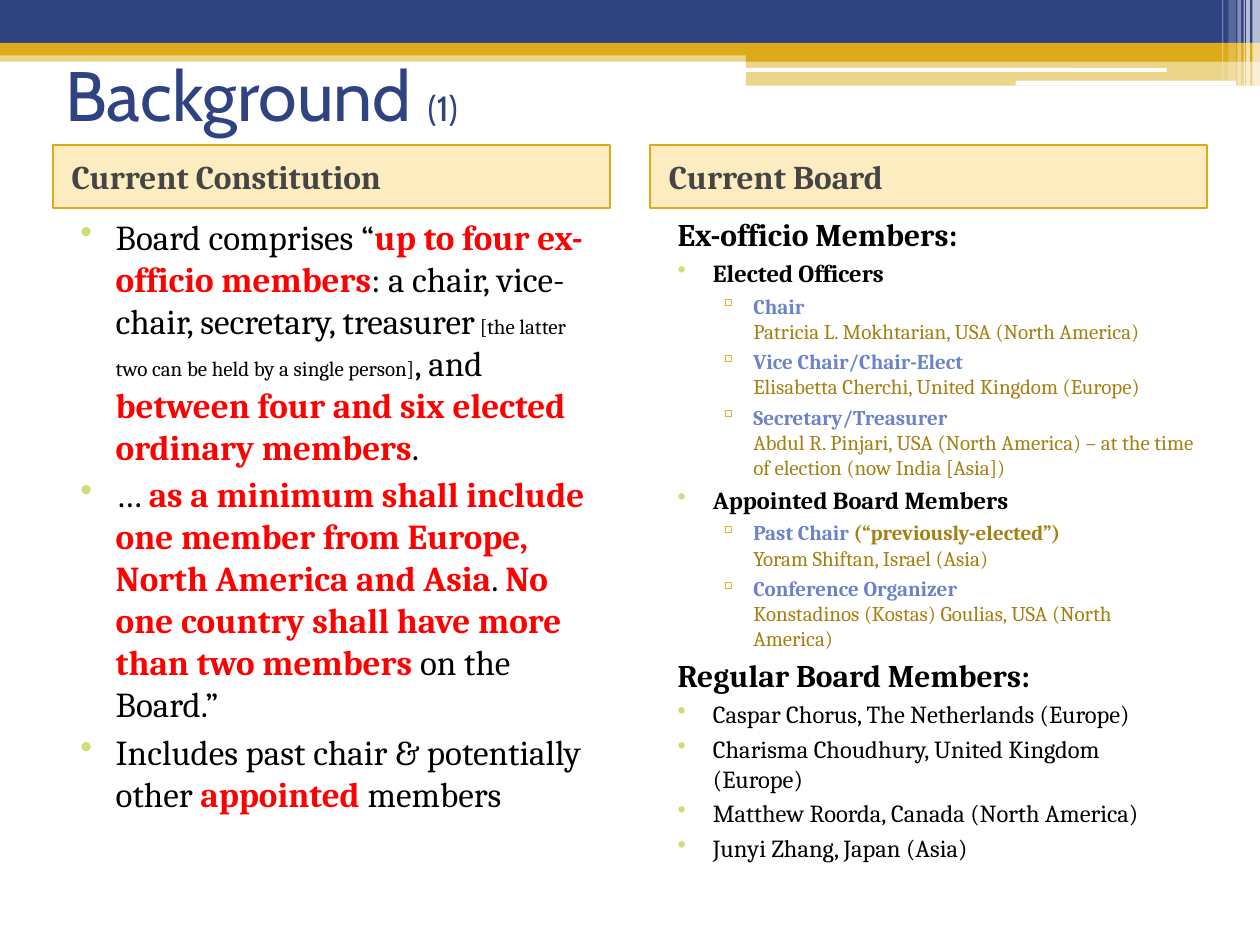
from copy import deepcopy
from dataclasses import dataclass

from lxml.etree import SubElement
from pptx import Presentation
from pptx.dml.color import RGBColor
from pptx.enum.shapes import MSO_SHAPE as Shape
from pptx.enum.text import MSO_ANCHOR as Anchor
from pptx.oxml.ns import qn
from pptx.util import Inches, Pt


@dataclass(frozen=True)
class Theme:
    navy: str = "2F4381"
    gold: str = "DDAA19"
    amber: str = "F6B600"
    white: str = "FFFFFF"
    black: str = "000000"
    gray: str = "454545"
    red: str = "FF0000"
    blue: str = "6C83C9"
    brown: str = "A67F13"
    lime: str = "D2DA7A"
    heading_font: str = "Cabin"
    body_font: str = "Cambria"
    title: int = 40
    body: int = 20
    header: int = 19
    group: int = 18
    item: int = 14
    small: int = 12


theme = Theme()

deck = Presentation()
deck.slide_width, deck.slide_height = Inches(10), Inches(7.5)
page = deck.slides.add_slide(deck.slide_layouts[6])


def add_block(left, top, width, height, color, opacity=100, kind=Shape.RECTANGLE):
    """Add a borderless filled shape; opacity is in percent."""
    block = page.shapes.add_shape(
        kind, Inches(left), Inches(top), Inches(width), Inches(height))
    block.shadow.inherit = False
    block.line.fill.background()
    block.fill.solid()
    block.fill.fore_color.rgb = RGBColor.from_string(color)
    if opacity < 100:
        tint = block.fill._xPr.find(qn("a:solidFill"))[0]
        SubElement(tint, qn("a:alpha"), val=str(opacity * 1000))
    return block


def add_spans(para, spans, font=theme.body_font):
    """Add (text, size, color, bold) runs; a final newline gives a line break."""
    for text, size, color, bold in spans:
        span = para.add_run()
        span.text = text.rstrip("\n")
        span.font.name = font
        span.font.size = Pt(size)
        span.font.bold = bold
        span.font.color.rgb = RGBColor.from_string(color)
        if text.endswith("\n"):
            para.add_line_break()
            para._p[-1].append(deepcopy(span._r.rPr))


# Banner: bands across the top, then white strips
for left, top, width, height, color, opacity in [
    (0, 0.4, 10, 0.09, theme.gold, 50),
    (0, 0, 10, 0.34, theme.navy, 100),
    (0, 0.34, 10, 0.1, theme.gold, 100),
    (5.92, 0.39, 4.08, 0.1, theme.gold, 100),
    (5.92, 0.48, 4.08, 0.2, theme.gold, 50),
]:
    add_block(left, top, width, height, color, opacity)

for left, top, width, height in [(5.91, 0.54, 3.35, 0.03), (8.06, 0.64, 1.75, 0.04)]:
    add_block(left, top, width, height, theme.white, kind=Shape.ROUNDED_RECTANGLE)

for left, width, height, opacity in [
    (9.94, 0.06, 0.68, 65),
    (9.89, 0.03, 0.68, 65),
    (9.87, 0.01, 0.68, 60),
    (9.82, 0.03, 0.68, 40),
    (9.75, 0.06, 0.64, 20),
    (9.7, 0.01, 0.64, 30),
]:
    add_block(left, 0, width, height, theme.white, opacity)

# Title
title = page.shapes.add_textbox(Inches(0.42), Inches(0.16), Inches(9.17), Inches(1.17))
title.text_frame.word_wrap = True
title.text_frame.vertical_anchor = Anchor.MIDDLE
add_spans(title.text_frame.paragraphs[0], [
    ("Background ", theme.title, theme.navy, False),
    ("(1)", theme.body, theme.navy, False),
], theme.heading_font)

# Paragraph levels: left margin, first-line indent, bullet, bullet color
levels = {
    "header": (0.05, 0, None, None),
    "group": (0.12, 0, None, None),
    "item": (0.4, -0.28, "•", theme.lime),
    "detail": (0.72, -0.27, "▫", theme.gold),
}


def plain(text, size=theme.body):
    return text, size, theme.black, False


def strong(text):
    return text, theme.body, theme.red, True


constitution = [
    ("item", [
        plain("Board comprises “"),
        strong("up to four ex-officio members"),
        plain(": a chair, vice-chair, secretary, treasurer"),
        plain(" [the latter two can be held by a single person]", theme.small),
        plain(", and "),
        strong("between four and six elected ordinary members"),
        plain("."),
    ]),
    ("item", [
        plain("… "),
        strong("as a minimum shall include one member from Europe, "
               "North America and Asia"),
        plain(". "),
        strong("No one country shall have more than two members "),
        plain("on the Board.”"),
    ]),
    ("item", [
        plain("Includes past chair & potentially other "),
        strong("appointed"),
        plain(" members"),
    ]),
]

officers = [
    ("Elected Officers", [
        ("Chair", "", "Patricia L. Mokhtarian, USA (North America)"),
        ("Vice Chair/Chair-Elect", "", "Elisabetta Cherchi, United Kingdom (Europe)"),
        ("Secretary/Treasurer", "", "Abdul R. Pinjari, USA (North America) – "
         "at the time of election (now India [Asia])"),
    ]),
    ("Appointed Board Members", [
        ("Past Chair ", "(“previously-elected”)", "Yoram Shiftan, Israel (Asia)"),
        ("Conference Organizer", "",
         "Konstadinos (Kostas) Goulias, USA (North America)"),
    ]),
]
regular_members = [
    "Caspar Chorus, The Netherlands (Europe)",
    "Charisma Choudhury, United Kingdom (Europe)",
    "Matthew Roorda, Canada (North America)",
    "Junyi Zhang, Japan (Asia)",
]

board = [("group", [("Ex-officio Members:", theme.group, theme.black, True)])]
for group, posts in officers:
    board.append(("item", [(group, theme.item, theme.black, True)]))
    for post, remark, holder in posts:
        if remark:
            heading = [(post, theme.small, theme.blue, True),
                       (remark + "\n", theme.small, theme.brown, True)]
        else:
            heading = [(post + "\n", theme.small, theme.blue, True)]
        board.append(("detail", heading + [(holder, theme.small, theme.brown, False)]))
board.append(("group", [("Regular Board Members:", theme.group, theme.black, True)]))
board += [("item", [plain(member, theme.item)]) for member in regular_members]

# Two columns, each a header bar above a text body
for left, heading, content, height in [
    (0.42, "Current Constitution", constitution, 5.54),
    (5.16, "Current Board", board, 5.67),
]:
    bar = add_block(left, 1.15, 4.42, 0.5, theme.amber, 25)
    bar.line.color.rgb = RGBColor.from_string(theme.gold)
    bar.line.width = Pt(1)
    bar.text_frame.vertical_anchor = Anchor.MIDDLE
    body = page.shapes.add_textbox(
        Inches(left), Inches(1.66), Inches(4.42), Inches(height))
    header = [("header", [(heading, theme.header, theme.gray, True)])]
    for box, entries in [(bar, header), (body, content)]:
        frame = box.text_frame
        frame.word_wrap = True
        for number, (level, spans) in enumerate(entries):
            para = frame.add_paragraph() if number else frame.paragraphs[0]
            para.level = 1 if level == "detail" else 0
            para.space_before = Pt(3)
            margin, indent, bullet, bullet_color = levels[level]
            props = para._p.get_or_add_pPr()
            props.set("algn", "l")
            props.set("marL", str(Inches(margin)))
            props.set("indent", str(Inches(indent)))
            if bullet:
                tint = SubElement(props, qn("a:buClr"))
                SubElement(tint, qn("a:srgbClr"), val=bullet_color)
                SubElement(props, qn("a:buChar"), char=bullet)
            add_spans(para, spans)

deck.save("out.pptx")
